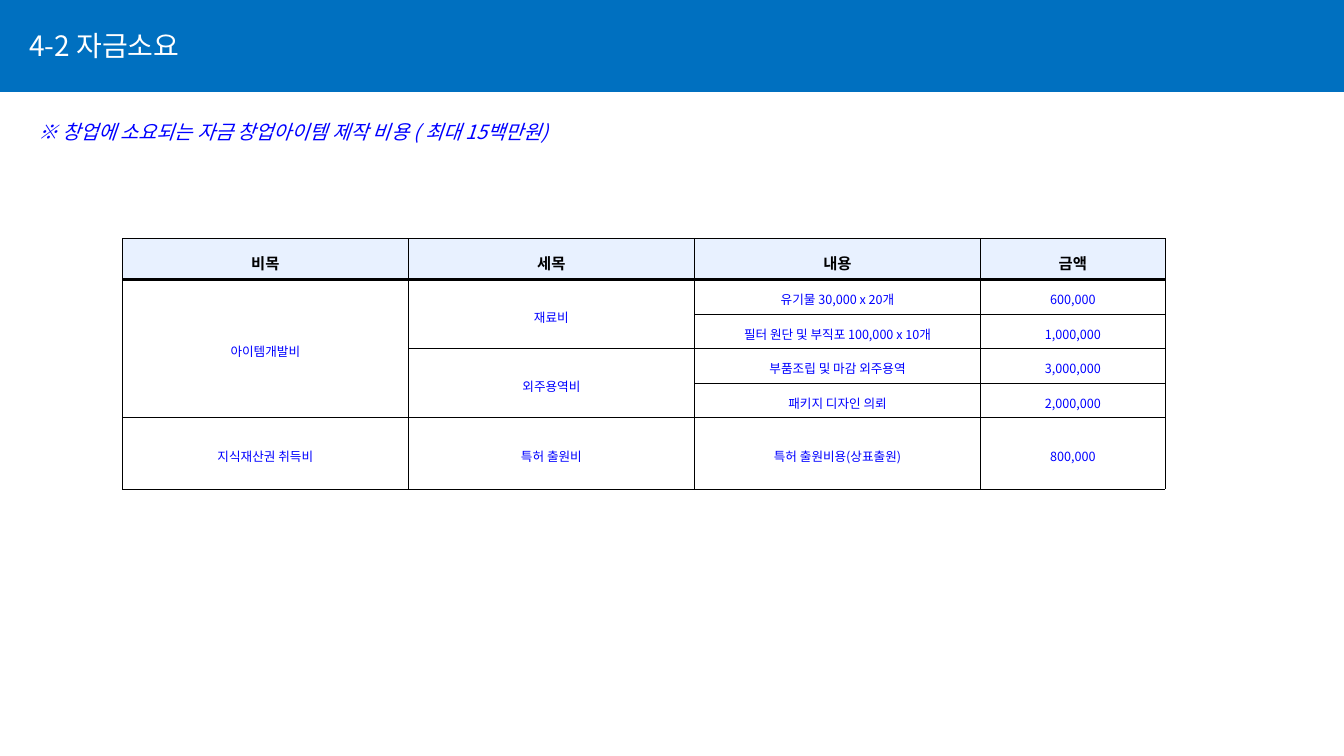
from lxml import etree
from pptx import Presentation
from pptx import util as u
from pptx.dml.color import RGBColor
from pptx.enum import shapes, text
from pptx.oxml import ns

FONT = "Noto Sans CJK KR"
BAND_BLUE = RGBColor(0x00, 0x70, 0xC0)
TEXT_BLUE = RGBColor(0x00, 0x00, 0xFF)
HEADER_FILL = RGBColor(0xE8, 0xF1, 0xFF)
BLACK = RGBColor(0x00, 0x00, 0x00)
WHITE = RGBColor(0xFF, 0xFF, 0xFF)

THIN, THICK = u.Pt(0.28), u.Pt(2.55)
COLUMN_WIDTHS = [7.21, 7.21, 7.21, 4.65]
ROW_HEIGHTS = [1.03] + [0.87] * 4 + [1.8]
ROWS = [
    ["비목", "세목", "내용", "금액"],
    ["아이템개발비", "재료비", "유기물 30,000 x 20개", "600,000"],
    ["", "", "필터 원단 및 부직포 100,000 x 10개", "1,000,000"],
    ["", "외주용역비", "부품조립 및 마감 외주용역", "3,000,000"],
    ["", "", "패키지 디자인 의뢰", "2,000,000"],
    ["지식재산권 취득비", "특허 출원비", "특허 출원비용(상표출원)", "800,000"],
]
MERGES = [((1, 0), (4, 0)), ((1, 1), (2, 1)), ((3, 1), (4, 1))]


def set_all(target, values):
    for name, value in values.items():
        setattr(target, name, value)


def write(frame, words, color, align=text.PP_ALIGN.LEFT, spacing=1.0, **font):
    para = frame.paragraphs[0]
    set_all(para, {"alignment": align, "line_spacing": spacing})
    span = para.add_run()
    span.text = words
    set_all(span.font, {"name": FONT, **font})
    span.font.color.rgb = color
    properties = span.font._element
    etree.SubElement(properties, ns.qn("a:ea"), typeface=FONT)


def add_title_band(page, left, top, width, height):
    band = page.shapes.add_shape(shapes.MSO_SHAPE.RECTANGLE, left, top, width, height)
    band.shadow.inherit = False
    band.fill.solid()
    band.fill.fore_color.rgb = BAND_BLUE
    band.line.fill.background()

    title = page.shapes.title
    title.element.addprevious(band.element)
    set_all(title, {"left": left + u.Cm(0.48), "top": top + u.Cm(0.58),
                    "width": u.Cm(4.5), "height": u.Cm(1.12)})
    set_all(title.text_frame, {"word_wrap": False,
                               "auto_size": text.MSO_AUTO_SIZE.NONE,
                               "vertical_anchor": text.MSO_ANCHOR.TOP})
    write(title.text_frame, "4-2 자금소요", WHITE, size=u.Pt(20))


def add_note(page, left, top, width, height):
    note = page.shapes.add_textbox(left, top, width, height)
    note.text_frame.word_wrap = True
    write(note.text_frame, "※ 창업에 소요되는 자금 창업아이템 제작 비용 ( 최대 15백만원)",
          TEXT_BLUE, size=u.Pt(14), italic=True)


def add_borders(cell, widths):
    properties = cell._tc.get_or_add_tcPr()
    for side, width in widths.items():
        line = etree.SubElement(properties, ns.qn(f"a:ln{side}"), w=str(int(width)))
        fill = etree.SubElement(line, ns.qn("a:solidFill"))
        etree.SubElement(fill, ns.qn("a:srgbClr"), val=str(BLACK))


def format_cell(cell, words, row):
    header = row == 0
    add_borders(cell, {"L": THIN, "R": THIN,
                       "T": THICK if row == 1 else THIN,
                       "B": THICK if header else THIN})
    if header:
        cell.fill.solid()
        cell.fill.fore_color.rgb = HEADER_FILL
    else:
        cell.fill.background()
    margins = {f"margin_{side}": u.Cm(0.05) for side in ("left", "right", "top", "bottom")}
    set_all(cell, {"vertical_anchor": text.MSO_ANCHOR.MIDDLE, **margins})
    if words:
        write(cell.text_frame, words, BLACK if header else TEXT_BLUE,
              text.PP_ALIGN.CENTER, 1.3, size=u.Pt(11 if header else 9), bold=header)


def add_budget_table(page, left, top, width, height):
    table = page.shapes.add_table(len(ROWS), len(COLUMN_WIDTHS),
                                  left, top, width, height).table
    set_all(table, {"first_row": False, "horz_banding": False})
    for column, size in zip(table.columns, COLUMN_WIDTHS):
        column.width = u.Cm(size)
    for line, size in zip(table.rows, ROW_HEIGHTS):
        line.height = u.Cm(size)
    for first, last in MERGES:
        table.cell(*first).merge(table.cell(*last))
    for row, entries in enumerate(ROWS):
        for column, words in enumerate(entries):
            format_cell(table.cell(row, column), words, row)


def main():
    deck = Presentation()
    set_all(deck, {"slide_width": u.Cm(33.87), "slide_height": u.Cm(19.05)})
    page = deck.slides.add_slide(deck.slide_layouts[5])
    add_title_band(page, 0, 0, deck.slide_width, u.Cm(2.32))
    add_note(page, u.Cm(0.71), u.Cm(2.9), u.Cm(27.74), u.Cm(0.86))
    add_budget_table(page, u.Cm(3.08), u.Cm(6.01),
                     u.Cm(sum(COLUMN_WIDTHS)), u.Cm(sum(ROW_HEIGHTS)))
    deck.save("out.pptx")


if __name__ == "__main__":
    main()
